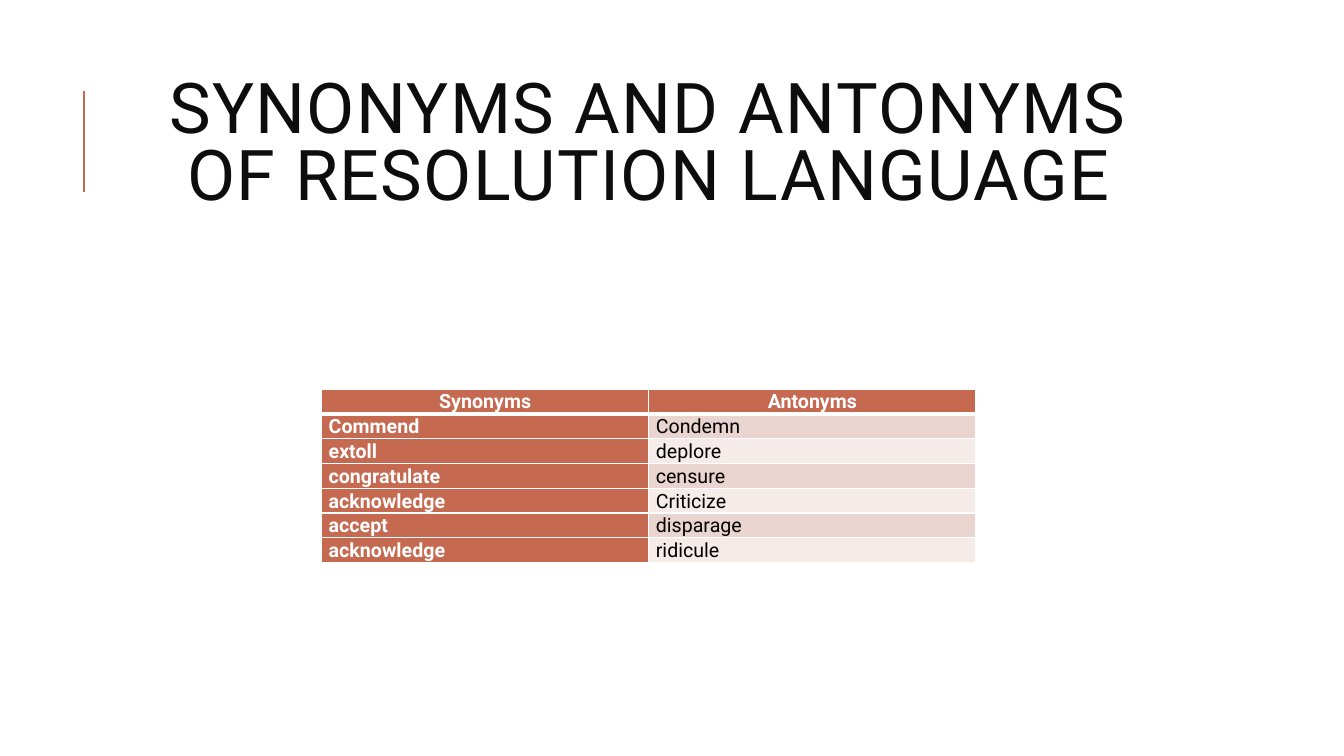
import pptx
import pptx.util
import pptx.dml.color
import pptx.enum.shapes
import pptx.enum.text
import pptx.oxml
import pptx.oxml.ns

Inches = pptx.util.Inches
Pt = pptx.util.Pt
ALIGN = pptx.enum.text.PP_ALIGN
ANCHOR = pptx.enum.text.MSO_ANCHOR

theme = {
    "font": "Roboto",
    "title_size": 50,
    "table_size": 14,
    "title": "0D0D0D",
    "accent": "C66951",
    "band_dark": "EAD4D0",
    "band_light": "F5EBE9",
    "white": "FFFFFF",
    "black": "000000",
}
word_pairs = [
    ("Synonyms", "Antonyms"),
    ("Commend", "Condemn"),
    ("extoll", "deplore"),
    ("congratulate", "censure"),
    ("acknowledge", "Criticize"),
    ("accept", "disparage"),
    ("acknowledge", "ridicule"),
]


def rgb(name):
    return pptx.dml.color.RGBColor.from_string(theme[name])


def write(paragraph, text, color, font_format, paragraph_format):
    run = paragraph.add_run()
    run.text = text
    run.font.color.rgb = rgb(color)
    for target, values in ((run.font, font_format), (paragraph, paragraph_format)):
        for name, value in values.items():
            setattr(target, name, value)
    return run


presentation = pptx.Presentation()
presentation.slide_width = Inches(13.33)
presentation.slide_height = Inches(7.5)
slide = presentation.slides.add_slide(presentation.slide_layouts[5])

accent_line = slide.shapes.add_connector(
    pptx.enum.shapes.MSO_CONNECTOR.STRAIGHT,
    Inches(0.83), Inches(1.9), Inches(0.83), Inches(0.9),
)
accent_line.line.color.rgb = rgb("accent")
accent_line.line.width = Pt(1.5)
pptx.oxml.ns.qn("a:effectLst")
accent_line._element.spPr.append(
    pptx.oxml.parse_xml(f'<a:effectLst {pptx.oxml.ns.nsdecls("a")}/>')
)

title = slide.shapes.title
title_box = {"left": 1.12, "top": 0.64, "width": 10.63, "height": 1.64}
for name, value in title_box.items():
    setattr(title, name, Inches(value))
title_frame_format = {
    "word_wrap": True,
    "auto_size": pptx.enum.text.MSO_AUTO_SIZE.NONE,
    "vertical_anchor": ANCHOR.MIDDLE,
}
for name, value in title_frame_format.items():
    setattr(title.text_frame, name, value)
title_run = write(
    title.text_frame.paragraphs[0],
    "SYNONYMS AND ANTONYMS OF RESOLUTION LANGUAGE",
    "title",
    {"name": theme["font"], "size": Pt(theme["title_size"])},
    {"alignment": ALIGN.CENTER, "line_spacing": 0.8},
)
title_run.font._element.set("spc", "100")

table = slide.shapes.add_table(
    len(word_pairs), 2, Inches(3.19), Inches(3.86), Inches(6.49), Inches(1.68)
).table
cell_format = {
    "margin_left": Inches(0.07),
    "margin_right": Inches(0.07),
    "margin_top": 0,
    "margin_bottom": 0,
    "vertical_anchor": ANCHOR.TOP,
}
for row, pair in enumerate(word_pairs):
    for column, word in enumerate(pair):
        cell = table.cell(row, column)
        for name, value in cell_format.items():
            setattr(cell, name, value)
        is_heading = row == 0 or column == 0
        band = "band_dark" if row % 2 else "band_light"
        cell.fill.solid()
        cell.fill.fore_color.rgb = rgb("accent" if is_heading else band)
        write(
            cell.text_frame.paragraphs[0],
            word,
            "white" if is_heading else "black",
            {"name": theme["font"], "size": Pt(theme["table_size"]), "bold": is_heading},
            {
                "alignment": ALIGN.CENTER if row == 0 else ALIGN.LEFT,
                "line_spacing": 1.07,
                "space_after": Pt(8),
            },
        )
        widths = {"L": 1, "R": 1, "T": 3 if row == 1 else 1, "B": 3 if row == 0 else 1}
        for position, (side, width) in enumerate(widths.items()):
            border = pptx.oxml.parse_xml(
                f'<a:ln{side} {pptx.oxml.ns.nsdecls("a")} w="{Pt(width)}">'
                f'<a:solidFill><a:srgbClr val="{theme["white"]}"/></a:solidFill></a:ln{side}>'
            )
            cell._tc.get_or_add_tcPr().insert(position, border)

presentation.save("out.pptx")
